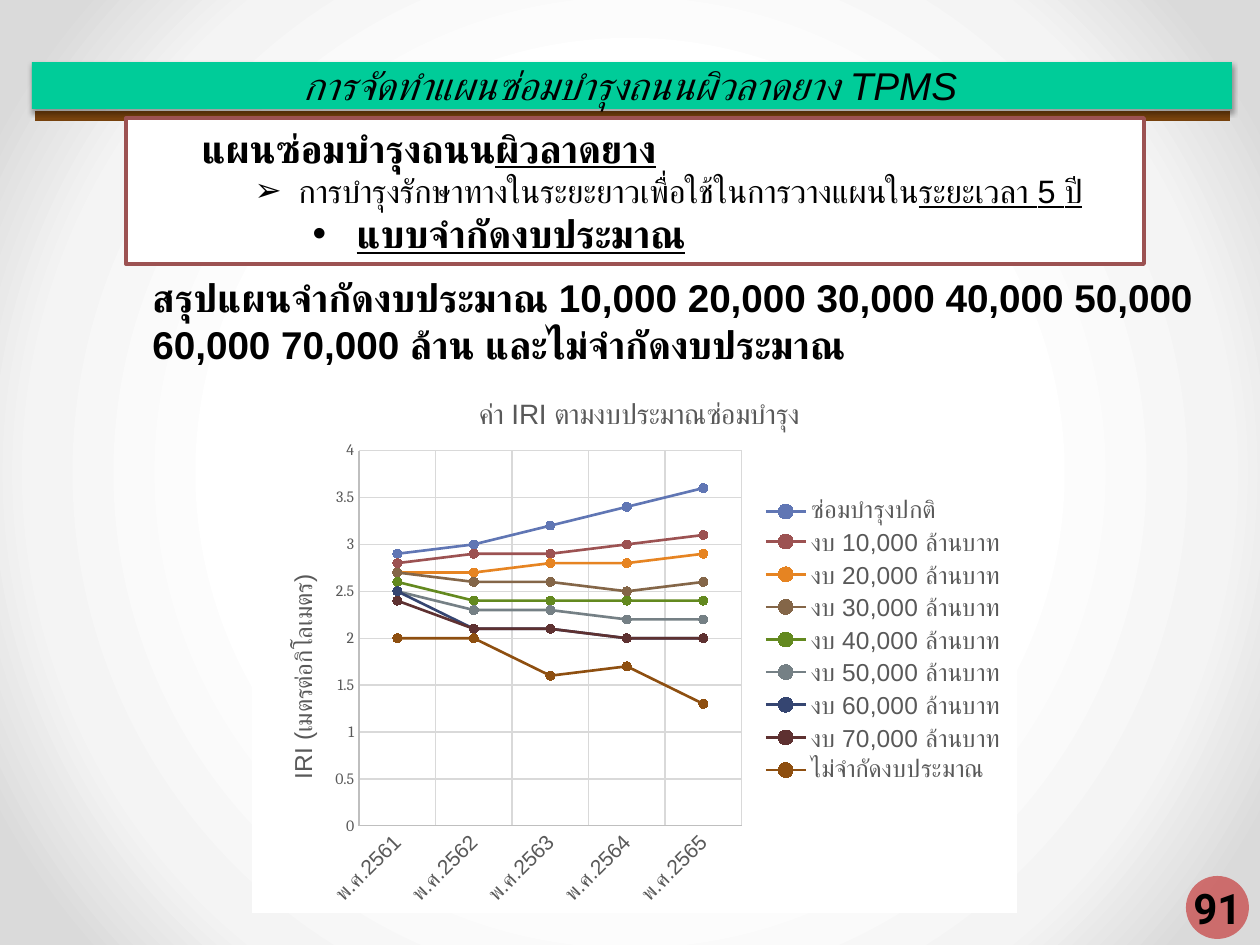
from lxml.etree import SubElement
from pptx import Presentation
from pptx.chart.data import CategoryChartData
from pptx.dml.color import RGBColor
from pptx.enum.chart import XL_CHART_TYPE, XL_LEGEND_POSITION, XL_MARKER_STYLE, XL_TICK_MARK
from pptx.enum.shapes import MSO_CONNECTOR, MSO_SHAPE
from pptx.enum.text import MSO_ANCHOR, MSO_AUTO_SIZE, PP_ALIGN
from pptx.oxml import parse_xml
from pptx.oxml.ns import nsdecls, qn
from pptx.util import Pt

PX = 914400 / 126
CATEGORIES = [f"พ.ศ.{year}" for year in range(2561, 2566)]
SERIES = [
    ("ซ่อมบำรุงปกติ", "6076B4", (2.9, 3, 3.2, 3.4, 3.6)),
    ("งบ 10,000 ล้านบาท", "9C5252", (2.8, 2.9, 2.9, 3, 3.1)),
    ("งบ 20,000 ล้านบาท", "E68422", (2.7, 2.7, 2.8, 2.8, 2.9)),
    ("งบ 30,000 ล้านบาท", "846648", (2.7, 2.6, 2.6, 2.5, 2.6)),
    ("งบ 40,000 ล้านบาท", "63891F", (2.6, 2.4, 2.4, 2.4, 2.4)),
    ("งบ 50,000 ล้านบาท", "758085", (2.5, 2.3, 2.3, 2.2, 2.2)),
    ("งบ 60,000 ล้านบาท", "354571", (2.5, 2.1, 2.1, 2, 2)),
    ("งบ 70,000 ล้านบาท", "5E3131", (2.4, 2.1, 2.1, 2, 2)),
    ("ไม่จำกัดงบประมาณ", "8E4F10", (2, 2, 1.6, 1.7, 1.3)),
]


def px(n):
    return int(n * PX)


def rgb(value):
    return RGBColor.from_string(value)


def style(font, size, color="000000", name="Arial", **flags):
    font.size, font.name = Pt(size), name
    font.color.rgb = rgb(color)
    for key, value in flags.items():
        setattr(font, key, value)


def add_text(p, text, size, **fmt):
    r = p.add_run()
    r.text = text
    style(r.font, size, **fmt)
    cs = SubElement(r._r.get_or_add_rPr(), qn("a:cs"))
    cs.set("typeface", fmt.get("name", "Arial"))


def place(sp, box):
    sp.left, sp.top, sp.width, sp.height = map(px, box)


def frame(sp, anchor=MSO_ANCHOR.TOP):
    tf = sp.text_frame
    tf.word_wrap, tf.auto_size, tf.vertical_anchor = True, MSO_AUTO_SIZE.NONE, anchor
    return tf


def paragraph(tf, first=False, level=0, left=0, indent=0, bullet=None, align=PP_ALIGN.LEFT):
    p = tf.paragraphs[0] if first else tf.add_paragraph()
    p.level, p.alignment, p.space_before = level, align, Pt(0)
    pPr = p._p.get_or_add_pPr()
    pPr.set("marL", str(px(left)))
    pPr.set("indent", str(px(indent)))
    if bullet:
        SubElement(pPr, qn("a:buFont")).set("typeface", "Arial")
        SubElement(pPr, qn("a:buChar")).set("char", bullet)
    else:
        SubElement(pPr, qn("a:buNone"))
    return p


def add_background(s):
    stops = "".join(f'<a:gs pos="{pos}000"><a:srgbClr val="{color}"/></a:gs>'
                    for pos, color in ((50, "FFFFFF"), (76, "F4F4F4"), (92, "DADADA")))
    s.element.cSld.insert(0, parse_xml(
        f'<p:bg {nsdecls("p", "a")}><p:bgPr><a:gradFill><a:gsLst>{stops}</a:gsLst>'
        '<a:path path="circle"><a:fillToRect l="50000" t="50000" r="50000" b="50000"/></a:path>'
        '</a:gradFill><a:effectLst/></p:bgPr></p:bg>'))


def add_plain_shape(s, kind, box, color):
    sp = s.shapes.add_shape(kind, *map(px, box))
    sp.shadow.inherit = False
    sp.fill.solid()
    sp.fill.fore_color.rgb = rgb(color)
    sp.line.fill.background()
    return sp


def add_title(s, box):
    x, y, w, h = box
    rule = s.shapes.add_connector(MSO_CONNECTOR.STRAIGHT, px(x + 3), px(y + 54), px(x + w - 2), px(y + 54))
    rule.line.color.rgb, rule.line.width = rgb("77420D"), Pt(6)
    SubElement(rule.element.spPr, qn("a:effectLst"))
    bar = add_plain_shape(s, MSO_SHAPE.RECTANGLE, box, "00CC99")
    bar.element.spPr.find(qn("a:effectLst")).append(parse_xml(
        f'<a:outerShdw {nsdecls("a")} blurRad="39370" dist="22860" dir="5400000" rotWithShape="0">'
        '<a:srgbClr val="000000"><a:alpha val="35000"/></a:srgbClr></a:outerShdw>'))
    title = s.shapes.title
    for sp in (rule, bar):
        title.element.addprevious(sp.element)
    place(title, (x - 16, y - 28, w + 28, 171))
    tf = frame(title)
    tf.margin_top = px(28)
    p = paragraph(tf, first=True, align=PP_ALIGN.CENTER)
    add_text(p, "การจัดทำแผนซ่อมบำรุงถนนผิวลาดยาง TPMS", 22.1, italic=True, bold=False)


def add_plan(s, box):
    body = s.placeholders[1]
    place(body, box)
    body.fill.solid()
    body.fill.fore_color.rgb = rgb("FFFFFF")
    body.line.color.rgb, body.line.width = rgb("9C5252"), Pt(2.25)
    tf = frame(body)
    p = paragraph(tf, first=True, level=1, left=63)
    add_text(p, "แผนซ่อมบำรุงถนน", 22.1, bold=True)
    add_text(p, "ผิวลาดยาง", 22.1, bold=True, underline=True)
    p = paragraph(tf, level=2, left=160, indent=-44, bullet="➢")
    add_text(p, "การบำรุงรักษาทางในระยะยาวเพื่อใช้ในการวางแผนใน", 18.5)
    add_text(p, "ระยะเวลา 5 ปี", 18.5, underline=True)
    p = paragraph(tf, level=3, left=218, indent=-44, bullet="•")
    add_text(p, "แบบจำกัดงบประมาณ", 22.1, bold=True, underline=True)


def add_summary(s, box):
    sp = s.shapes.add_textbox(*map(px, box))
    p = paragraph(frame(sp), first=True, level=1, left=63)
    add_text(p, "สรุปแผนจำกัดงบประมาณ 10,000 20,000 30,000 40,000 50,000 "
                "60,000 70,000 ล้าน และไม่จำกัดงบประมาณ", 22.1, bold=True)


def set_layout(element, index, inner=False, **sizes):
    for old in element.findall(qn("c:layout")):
        element.remove(old)
    target = '<c:layoutTarget val="inner"/>' if inner else ""
    modes = "".join(f'<c:{key}Mode val="edge"/>' for key in "xy")
    values = "".join(f'<c:{key} val="{value}"/>' for key, value in sizes.items())
    element.insert(index, parse_xml(
        f'<c:layout {nsdecls("c")}><c:manualLayout>{target}{modes}{values}</c:manualLayout></c:layout>'))


def format_axis(axis, size, name):
    axis.major_tick_mark = axis.minor_tick_mark = XL_TICK_MARK.NONE
    axis.has_major_gridlines = True
    for line, color in ((axis.format.line, "BFBFBF"), (axis.major_gridlines.format.line, "D9D9D9")):
        line.color.rgb, line.width = rgb(color), Pt(0.75)
    style(axis.tick_labels.font, size, "595959", name)


def add_iri_chart(s, box):
    data = CategoryChartData()
    data.categories = CATEGORIES
    for name, _, values in SERIES:
        data.add_series(name, values)
    chart = s.shapes.add_chart(XL_CHART_TYPE.LINE_MARKERS, *map(px, box), data).chart
    style(chart.font, 10, name="Cambria")
    root = chart.element
    root.find(qn("c:chart")).addnext(parse_xml(
        f'<c:spPr {nsdecls("c", "a")}><a:solidFill><a:srgbClr val="FFFFFF"/></a:solidFill>'
        '<a:ln><a:noFill/></a:ln></c:spPr>'))
    plot = chart.plots[0]
    plot.vary_by_categories = False
    for series, (_, color, _) in zip(plot.series, SERIES):
        series.smooth = False
        series.format.line.color.rgb, series.format.line.width = rgb(color), Pt(1.5)
        marker = series.marker
        marker.style, marker.size = XL_MARKER_STYLE.CIRCLE, 5
        marker.format.fill.solid()
        marker.format.fill.fore_color.rgb = rgb(color)
        marker.format.line.color.rgb = rgb(color)

    cat, val = chart.category_axis, chart.value_axis
    format_axis(cat, 12, "Arial")
    format_axis(val, 9, "Cambria")
    val.minimum_scale, val.maximum_scale, val.major_unit = 0, 4, 0.5
    val.tick_labels.number_format, val.tick_labels.number_format_is_linked = "General", False
    root.find(f'.//{qn("c:catAx")}/{qn("c:txPr")}/{qn("a:bodyPr")}').set("rot", "-2700000")

    chart.has_title = True
    for owner, text, size in ((chart.chart_title, "ค่า IRI ตามงบประมาณซ่อมบำรุง", 16),
                              (val.axis_title, "IRI (เมตรต่อกิโลเมตร)", 14)):
        add_text(owner.text_frame.paragraphs[0], text, size, color="595959", bold=False)
    val_title = root.find(f'.//{qn("c:valAx")}/{qn("c:title")}')
    val_title.find(f'.//{qn("a:bodyPr")}').set("rot", "-5400000")
    chart.has_legend = True
    chart.legend.position, chart.legend.include_in_layout = XL_LEGEND_POSITION.RIGHT, False
    style(chart.legend.font, 14, "595959")

    set_layout(root.find(f'{qn("c:chart")}/{qn("c:title")}'), 1, x=0.29, y=0.04)
    set_layout(val_title, 1, x=0.04, y=0.37)
    set_layout(root.find(f'.//{qn("c:plotArea")}'), 0, inner=True, x=0.14, y=0.15, w=0.5, h=0.69)
    set_layout(root.find(f'.//{qn("c:legend")}'), 1, x=0.66, y=0.23, w=0.33, h=0.54)


def add_page_number(s, box):
    sp = add_plain_shape(s, MSO_SHAPE.OVAL, box, "C00000")
    color = sp.element.spPr.find(f'{qn("a:solidFill")}/{qn("a:srgbClr")}')
    SubElement(color, qn("a:alpha")).set("val", "50000")
    tf = frame(sp, MSO_ANCHOR.MIDDLE)
    tf.word_wrap = False
    tf.margin_left = tf.margin_right = tf.margin_top = tf.margin_bottom = 0
    p = paragraph(tf, first=True, align=PP_ALIGN.CENTER)
    add_text(p, "91", 24, name="Roboto", bold=True)


def main():
    prs = Presentation()
    prs.slide_width, prs.slide_height = px(1260), px(945)
    s = prs.slides.add_slide(prs.slide_layouts[1])
    add_background(s)
    add_title(s, (32, 62, 1200, 47))
    add_plan(s, (126, 118, 1018, 146))
    add_summary(s, (77, 268, 1144, 107))
    add_iri_chart(s, (252, 369, 765, 544))
    add_page_number(s, (1186, 876, 63, 63))
    prs.save("out.pptx")


if __name__ == "__main__":
    main()
